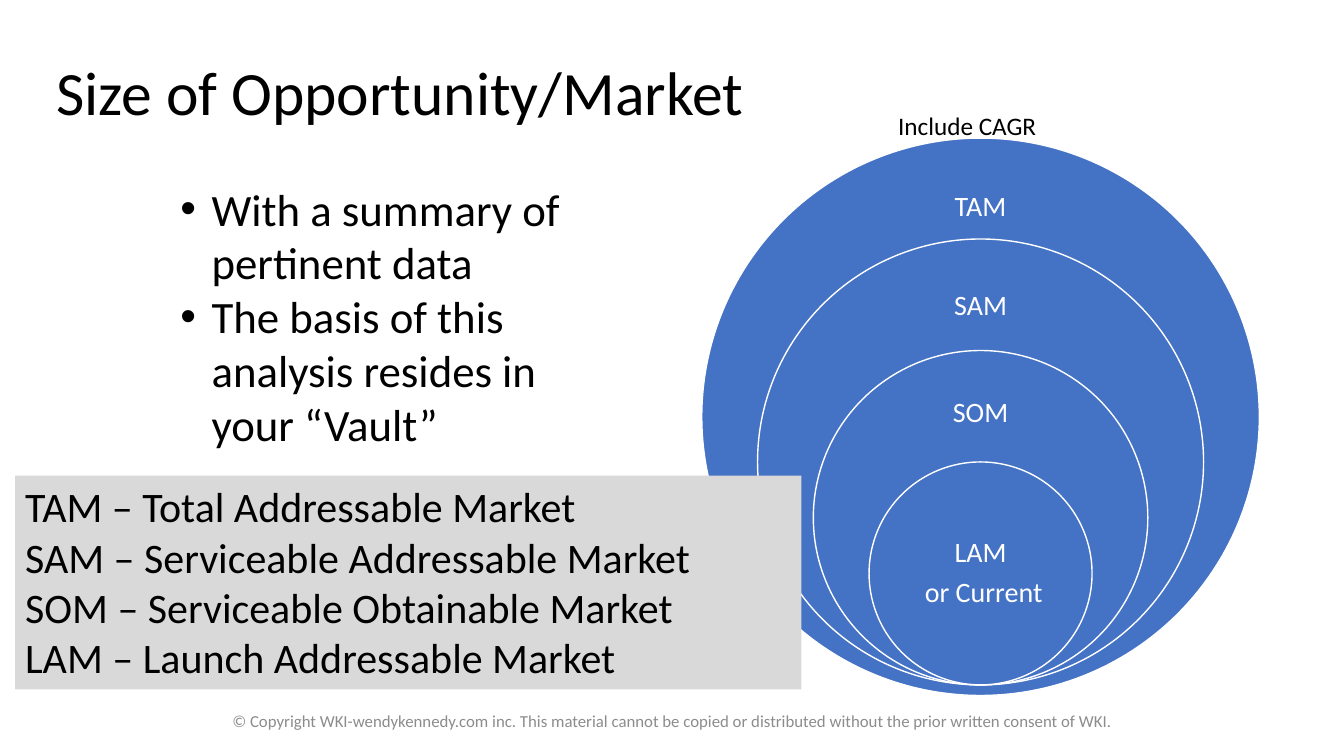
from pptx import Presentation
from pptx.dml.color import RGBColor
from pptx.enum.shapes import MSO_SHAPE
from pptx.enum.text import MSO_ANCHOR, PP_ALIGN
from pptx.oxml import parse_xml
from pptx.oxml.ns import nsdecls
from pptx.util import Inches, Pt

W, H = Inches(13.33), Inches(7.5)
FONT = "Calibri"
BLACK, WHITE, BLUE, PANEL, GREY = "000000", "FFFFFF", "4472C4", "D9D9D9", "8C8C8C"

CENTRE_X = 72.96
OUTER_SIZE = 73.73
LABEL_W = 11.63
MARKETS = [
    (1.0, 92, 9.13, 11.07, ["TAM"]),
    (0.8, 90.6, 8.93, 10.67, ["SAM"]),
    (0.6, 90.6, 8.33, 10, ["SOM"]),
    (0.4, 90.6, 14.73, 14.8, ["LAM", " or Current"]),
]
POINTS = [
    "With a summary of pertinent data",
    "The basis of this analysis resides in your “Vault”",
]
DEFINITIONS = [
    "TAM – Total Addressable Market",
    "SAM – Serviceable Addressable Market",
    "SOM – Serviceable Obtainable Market",
    "LAM – Launch Addressable Market",
]
COPYRIGHT = (
    "© Copyright WKI-wendykennedy.com inc. This material cannot be copied "
    "or distributed without the prior written consent of WKI."
)


def rgb(value):
    """Turn a hex string into a colour."""
    return RGBColor.from_string(value)


def across(share):
    """Return a percentage of the slide width."""
    return int(W * share / 100)


def down(share):
    """Return a percentage of the slide height."""
    return int(H * share / 100)


def add_bullet(p):
    """Give a paragraph a round bullet and a hanging indent."""
    pPr = p._p.get_or_add_pPr()
    pPr.set("marL", str(Inches(0.31)))
    pPr.set("indent", str(-Inches(0.31)))
    pPr.append(parse_xml(f'<a:buFont {nsdecls("a")} typeface="Arial"/>'))
    pPr.append(parse_xml(f'<a:buChar {nsdecls("a")} char="•"/>'))


def add_text(s, box, lines, size, color=BLACK, align=PP_ALIGN.LEFT,
             anchor=MSO_ANCHOR.TOP, spacing=None, after=None, bullet=False, fill=None):
    """Add a text box placed by percentages of the slide."""
    x, y, w, h = box
    sp = s.shapes.add_textbox(across(x), down(y), across(w), down(h))
    if fill:
        sp.fill.solid()
        sp.fill.fore_color.rgb = rgb(fill)
    tf = sp.text_frame
    tf.word_wrap = True
    tf.vertical_anchor = anchor
    for i, line in enumerate(lines):
        p = tf.add_paragraph() if i else tf.paragraphs[0]
        p.alignment = align
        p.line_spacing = spacing
        p.space_after = after
        if bullet:
            add_bullet(p)
        r = p.add_run()
        r.text = line
        r.font.name = FONT
        r.font.size = Pt(size)
        r.font.color.rgb = rgb(color)


def add_circle(s, bottom, size):
    """Add a circle resting on a given height of the slide."""
    d = down(size)
    sp = s.shapes.add_shape(
        MSO_SHAPE.OVAL, across(CENTRE_X) - d // 2, down(bottom) - d, d, d)
    sp.shadow.inherit = False
    sp.fill.solid()
    sp.fill.fore_color.rgb = rgb(BLUE)
    sp.line.color.rgb = rgb(WHITE)
    sp.line.width = Pt(1)


def add_markets(s):
    """Add the nested market circles with their labels."""
    for ratio, bottom, offset, height, label in MARKETS:
        size = OUTER_SIZE * ratio
        add_circle(s, bottom, size)
        top = bottom - size + offset - height / 2
        add_text(s, (CENTRE_X - LABEL_W / 2, top, LABEL_W, height), label, 20, WHITE,
                 PP_ALIGN.CENTER, MSO_ANCHOR.MIDDLE, spacing=0.9, after=Pt(7))


def main():
    """Build the slide and save it."""
    prs = Presentation()
    prs.slide_width, prs.slide_height = W, H
    s = prs.slides.add_slide(prs.slide_layouts[6])
    add_text(s, (3.45, 2.93, 86.27, 19.33), ["Size of Opportunity/Market"], 44,
             anchor=MSO_ANCHOR.MIDDLE, spacing=0.9)
    add_markets(s)
    add_text(s, (12.68, 23.33, 30.23, 41.33), POINTS, 32, bullet=True)
    add_text(s, (1.13, 62.93, 58.51, 28.27), DEFINITIONS, 30, fill=PANEL)
    add_text(s, (66.09, 13.87, 20.33, 5.33), ["Include CAGR"], 18)
    add_text(s, (6.9, 92.67, 86.27, 5.33), [COPYRIGHT], 12, GREY,
             PP_ALIGN.CENTER, MSO_ANCHOR.MIDDLE)
    prs.save("out.pptx")


if __name__ == "__main__":
    main()
